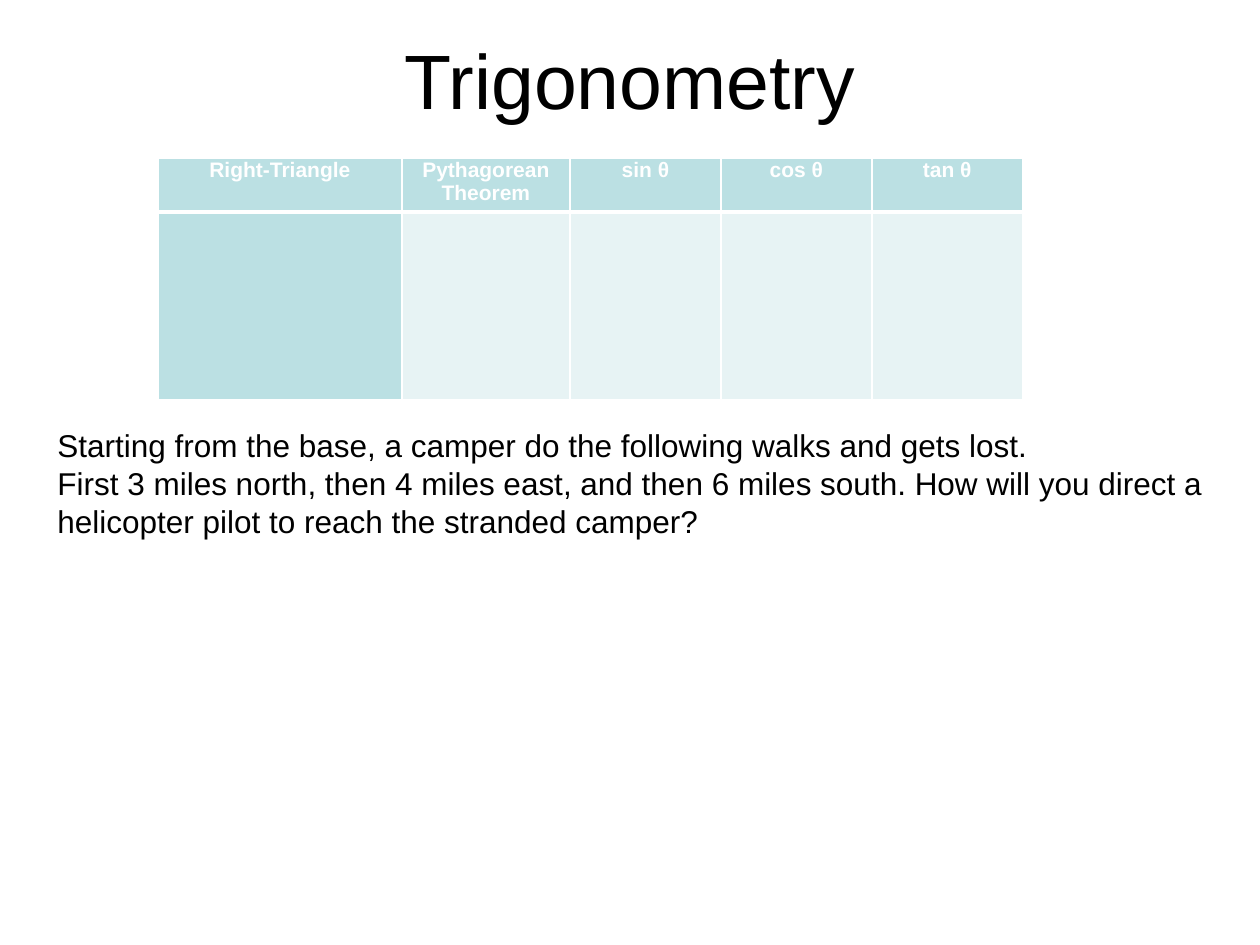
from lxml.etree import SubElement
from pptx import Presentation
from pptx.dml.color import RGBColor
from pptx.enum.text import MSO_ANCHOR, MSO_AUTO_SIZE, PP_ALIGN
from pptx.oxml.ns import qn
from pptx.util import Emu, Pt

PX_PER_INCH = 126
BLACK, WHITE = "000000", "FFFFFF"
TEAL, PALE_TEAL = "BBE0E3", "E7F3F4"

HEADINGS = ["Right-Triangle", "Pythagorean Theorem", "sin θ", "cos θ", "tan θ"]
COLUMN_WIDTHS = [244, 168, 151, 151, 151]
ROW_HEIGHTS = [54, 188]
PROBLEM = (
    "Starting from the base, a camper do the following walks and gets lost.\v"
    "First 3 miles north, then 4 miles east, and then 6 miles south. "
    "How will you direct a helicopter pilot to reach the stranded camper?"
)


def px(length):
    return Emu(round(length * 914400 / PX_PER_INCH))


def color(hex_code):
    return RGBColor.from_string(hex_code)


def write(frame, text, size=18, fill=BLACK, bold=False, align=PP_ALIGN.LEFT):
    para = frame.paragraphs[0]
    para.text = text
    para.alignment = align
    for span in para.runs:
        span.font.name = "Arial"
        span.font.size = Pt(size)
        span.font.bold = bold
        span.font.color.rgb = color(fill)


def set_borders(cell, **widths):
    properties = cell._tc.get_or_add_tcPr()
    for side in "LRTB":
        line = SubElement(properties, qn(f"a:ln{side}"), w=str(Pt(widths.get(side, 1))))
        SubElement(SubElement(line, qn("a:solidFill")), qn("a:srgbClr"), val=WHITE)


def place_title(page, box):
    title = page.shapes.title
    title.left, title.top, title.width, title.height = map(px, box)
    title.text_frame.vertical_anchor = MSO_ANCHOR.MIDDLE
    write(title.text_frame, "Trigonometry", size=44, align=PP_ALIGN.CENTER)


def place_ratio_table(page, left, top):
    box = (left, top, sum(COLUMN_WIDTHS), sum(ROW_HEIGHTS))
    table = page.shapes.add_table(2, len(HEADINGS), *map(px, box)).table
    table.horz_banding = False
    for row, height in zip(table.rows, ROW_HEIGHTS):
        row.height = px(height)

    for index, (heading, width) in enumerate(zip(HEADINGS, COLUMN_WIDTHS)):
        table.columns[index].width = px(width)
        header, answer = table.cell(0, index), table.cell(1, index)

        # A thick rule separates the headings from the answer row
        set_borders(header, B=3)
        set_borders(answer, T=3)
        for cell, fill in ((header, TEAL), (answer, PALE_TEAL if index else TEAL)):
            cell.fill.solid()
            cell.fill.fore_color.rgb = color(fill)

        header.margin_left = header.margin_right = px(9)
        header.margin_top = header.margin_bottom = 0
        write(header.text_frame, heading, size=12, fill=WHITE, bold=True,
              align=PP_ALIGN.CENTER)


def place_problem(page, box):
    frame = page.shapes.add_textbox(*map(px, box)).text_frame
    frame.word_wrap = True
    frame.auto_size = MSO_AUTO_SIZE.SHAPE_TO_FIT_TEXT
    write(frame, PROBLEM)


def main():
    deck = Presentation()
    deck.slide_width, deck.slide_height = px(1260), px(945)
    page = deck.slides.add_slide(deck.slide_layouts[5])
    place_title(page, (63, 0, 1134, 158))
    place_problem(page, (45, 420, 1215, 357))
    place_ratio_table(page, 158, 158)
    deck.save("out.pptx")


if __name__ == "__main__":
    main()
